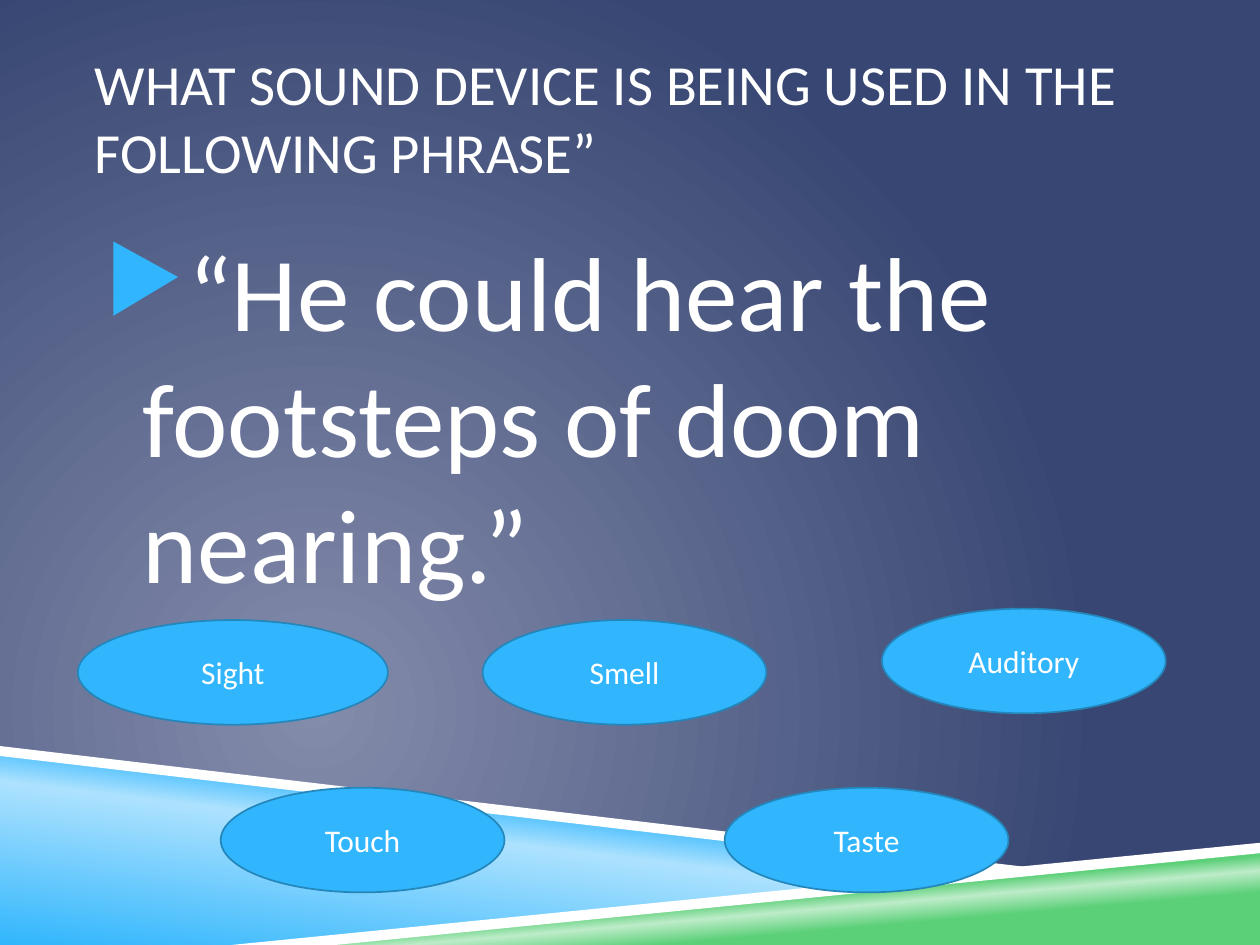
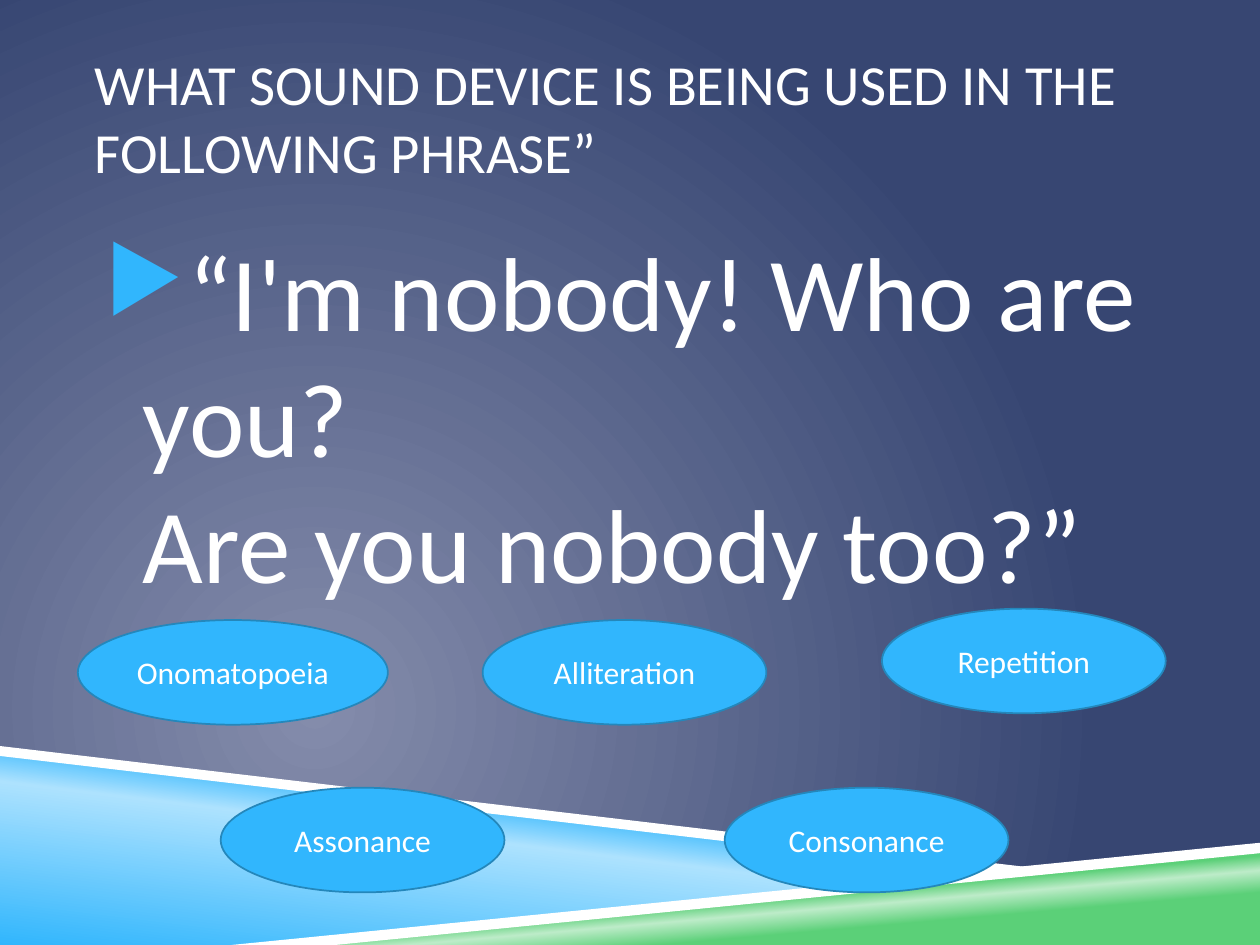
from dataclasses import dataclass

from lxml import etree
from pptx import Presentation
from pptx.dml.color import RGBColor
from pptx.enum.shapes import MSO_SHAPE
from pptx.enum.text import MSO_ANCHOR, PP_ALIGN
from pptx.oxml.ns import qn
from pptx.util import Cm, Pt

OVAL = MSO_SHAPE.OVAL
MIDDLE, TOP = MSO_ANCHOR.MIDDLE, MSO_ANCHOR.TOP
LEFT, CENTER = PP_ALIGN.LEFT, PP_ALIGN.CENTER

FONT = "Calibri"
COLORS = {
    "white": "FFFFFF", "navy": "374672", "haze": "848CAB",
    "blue": "31B6FD", "sky": "ADE2FE", "edge": "2487BB",
    "green": "5BD078", "mint": "BDECC9",
}
WIDE, HIGH = 25.4, 19.05
TITLE = "WHAT SOUND DEVICE IS BEING USED IN THE FOLLOWING PHRASE”"


@dataclass
class Band:
    """An outline in cm, with gradient stops (percent, colour) and an angle."""
    points: list[tuple[float, float]]
    stops: list[tuple[int, str]]
    angle: int = 0


@dataclass
class Spot:
    """Place of an answer oval, in cm."""
    left: float
    top: float
    width: float = 5.72
    height: float = 2.11


@dataclass
class Quiz:
    lines: list[str]
    answers: list[str]


BANDS = [
    Band([(0, 15.16), (20.12, 17.58), (5.08, HIGH), (0, HIGH)],
         [(0, "blue"), (52, "sky"), (66, "blue")], 277),
    Band([(5.03, HIGH), (WIDE, 17.07), (WIDE, HIGH)],
         [(28, "green"), (40, "mint"), (48, "green")], 265),
    Band([(0, 15.04), (0, 15.24), (20.07, 17.6), (21.13, 17.53)],
         [(0, "white")]),
    Band([(WIDE, 16.99), (4.67, HIGH), (6.76, HIGH), (WIDE, 17.2)],
         [(0, "white")]),
]
SPOTS = [
    Spot(1.57, 12.5, width=6.25), Spot(9.73, 12.5),
    Spot(4.45, 15.88), Spot(14.61, 15.88), Spot(17.78, 12.27),
]
QUIZZES = [
    Quiz(["“He could hear the footsteps of doom nearing.”"],
         ["Sight", "Smell", "Touch", "Taste", "Auditory"]),
    Quiz(["“I'm nobody! Who are you?", "Are you nobody too?”"],
         ["Onomatopoeia", "Alliteration", "Assonance", "Consonance",
          "Repetition"]),
]


def color(name: str) -> RGBColor:
    return RGBColor.from_string(COLORS[name])


def add(parent, tag: str, **attrs):
    node = etree.SubElement(parent, qn(tag))
    for key, value in attrs.items():
        node.set(key, str(value))
    return node


def blend(holder, stops: list[tuple[int, str]]):
    """Swap the solid fill inside holder for a gradient and return it."""
    solid = holder.find(qn("a:solidFill"))
    grad = etree.Element(qn("a:gradFill"), rotWithShape="1")
    chain = add(grad, "a:gsLst")
    for place, name in stops:
        stop = add(chain, "a:gs", pos=place * 1000)
        add(stop, "a:srgbClr", val=COLORS[name])
    holder.replace(solid, grad)
    return grad


def paint(shape, name: str) -> None:
    shape.shadow.inherit = False
    shape.fill.solid()
    shape.fill.fore_color.rgb = color(name)


def draw_back(slide) -> None:
    fill = slide.background.fill
    fill.solid()
    fill.fore_color.rgb = color("navy")
    holder = next(slide.element.iter(qn("p:bgPr")))
    grad = blend(holder, [(0, "haze"), (100, "navy")])
    glow = add(grad, "a:path", path="circle")
    add(glow, "a:fillToRect", l=50000, t=100000, r=100000, b=50000)


def draw_band(slide, band: Band) -> None:
    first, *rest = [(Cm(x), Cm(y)) for x, y in band.points]
    pen = slide.shapes.build_freeform(*first)
    pen.add_line_segments(rest, close=True)
    shape = pen.convert_to_shape()
    paint(shape, band.stops[0][1])
    shape.line.fill.background()
    if len(band.stops) > 1:
        grad = blend(shape.element.spPr, band.stops)
        add(grad, "a:lin", ang=band.angle * 60000, scaled=0)


def write(para, lines: list[str], size: float) -> None:
    for i, line in enumerate(lines):
        if i:
            para.add_line_break()
        run = para.add_run()
        run.text = line
        run.font.name = FONT
        run.font.size = Pt(size)
        run.font.color.rgb = color("white")


def add_box(slide, top: float, height: float, anchor):
    """Add a text box in the shared column and return its paragraph."""
    box = slide.shapes.add_textbox(Cm(1.91), Cm(top), Cm(21.59), Cm(height))
    frame = box.text_frame
    frame.word_wrap = True
    frame.vertical_anchor = anchor
    frame.margin_left = frame.margin_right = 0
    para = frame.paragraphs[0]
    para.alignment = LEFT
    return para


def add_mark(para) -> None:
    props = para._p.get_or_add_pPr()
    props.set("marL", str(Cm(0.97)))
    props.set("indent", str(Cm(-0.76)))
    tint = add(props, "a:buClr")
    add(tint, "a:srgbClr", val=COLORS["blue"])
    add(props, "a:buSzPct", val=85000)
    add(props, "a:buChar", char="▶")


def draw_oval(slide, spot: Spot, label: str) -> None:
    oval = slide.shapes.add_shape(
        OVAL, Cm(spot.left), Cm(spot.top), Cm(spot.width), Cm(spot.height))
    paint(oval, "blue")
    oval.line.color.rgb = color("edge")
    oval.line.width = Pt(1)
    frame = oval.text_frame
    frame.word_wrap = True
    frame.vertical_anchor = MIDDLE
    para = frame.paragraphs[0]
    para.alignment = CENTER
    write(para, [label], 18)


def draw_quiz(slide, quiz: Quiz) -> None:
    # Shared backdrop
    draw_back(slide)
    for band in BANDS:
        draw_band(slide, band)

    # Question and phrase
    write(add_box(slide, 0.76, 3.18, MIDDLE), [TITLE], 32.4)
    phrase = add_box(slide, 4.45, 10.36, TOP)
    add_mark(phrase)
    write(phrase, quiz.lines, 60)

    # Answers
    for spot, label in zip(SPOTS, quiz.answers):
        draw_oval(slide, spot, label)


def main() -> None:
    prs = Presentation()
    prs.slide_width, prs.slide_height = Cm(WIDE), Cm(HIGH)
    blank = prs.slide_layouts[6]
    for quiz in QUIZZES:
        draw_quiz(prs.slides.add_slide(blank), quiz)
    prs.save("out.pptx")


if __name__ == "__main__":
    main()
